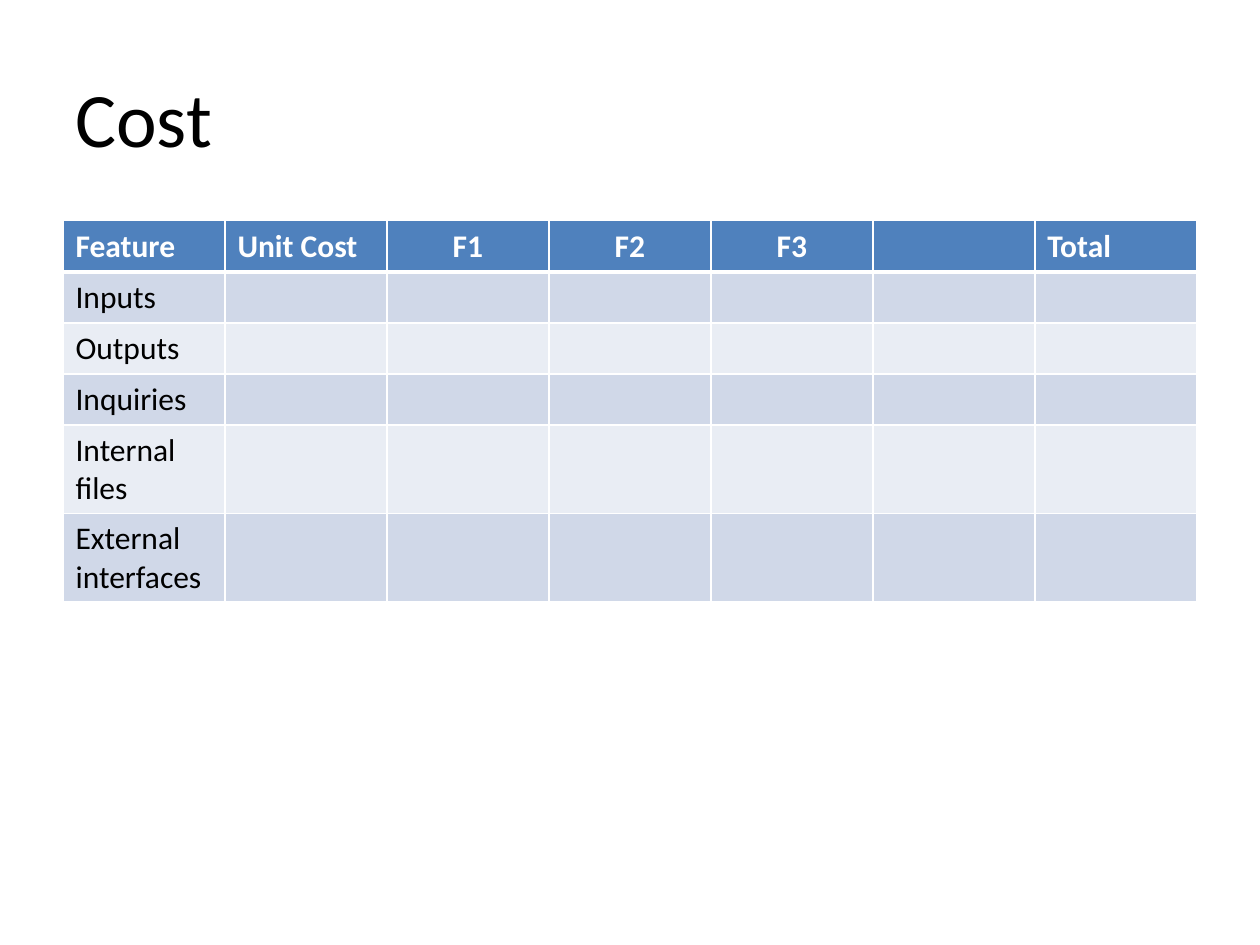
from lxml.etree import SubElement
from pptx import Presentation
from pptx.dml.color import RGBColor
from pptx.enum.text import MSO_ANCHOR, PP_ALIGN
from pptx.oxml.ns import qn
from pptx.util import Cm, Pt

TITLE = "Cost"
HEADS = ["Feature", "Unit Cost", "F1", "F2", "F3", "", "Total"]
ITEMS = ["Inputs", "Outputs", "Inquiries", "Internal files", "External interfaces"]
MIDDLE = {"F1", "F2", "F3"}

FONT = "Calibri"
BLACK = RGBColor(0x00, 0x00, 0x00)
WHITE = RGBColor(0xFF, 0xFF, 0xFF)
BLUE = RGBColor(0x4F, 0x81, 0xBD)
BANDS = [RGBColor(0xD0, 0xD8, 0xE8), RGBColor(0xE9, 0xED, 0xF4)]

LEFT, WIDTH = Cm(1.27), Cm(22.86)
ROW = Cm(1.03)


def write(para, text, size, color, bold=False):
    run = para.add_run()
    run.text = text
    font = run.font
    font.name, font.size, font.bold = FONT, Pt(size), bold
    font.color.rgb = color


def edge(cell, side, width):
    line = SubElement(cell._tc.get_or_add_tcPr(), qn(f"a:ln{side}"), w=str(Pt(width)))
    fill = SubElement(line, qn("a:solidFill"))
    SubElement(fill, qn("a:srgbClr"), val=str(WHITE))


def main():
    deck = Presentation()
    deck.slide_width, deck.slide_height = Cm(25.4), Cm(19.05)
    slide = deck.slides.add_slide(deck.slide_layouts[6])

    frame = slide.shapes.add_textbox(LEFT, Cm(0.76), WIDTH, Cm(3.18)).text_frame
    frame.word_wrap = True
    frame.vertical_anchor = MSO_ANCHOR.MIDDLE
    write(frame.paragraphs[0], TITLE, 44, BLACK)

    rows = [HEADS] + [[item] + [""] * (len(HEADS) - 1) for item in ITEMS]
    table = slide.shapes.add_table(
        len(rows), len(HEADS), LEFT, Cm(4.45), WIDTH, ROW * len(rows)
    ).table

    for r, row in enumerate(rows):
        table.rows[r].height = ROW
        head = r == 0
        for c, text in enumerate(row):
            cell = table.cell(r, c)
            edge(cell, "L", 1)
            edge(cell, "R", 1)
            edge(cell, "T", 3 if r == 1 else 1)
            edge(cell, "B", 3 if head else 1)
            cell.fill.solid()
            cell.fill.fore_color.rgb = BLUE if head else BANDS[(r - 1) % 2]
            para = cell.text_frame.paragraphs[0]
            if text in MIDDLE:
                para.alignment = PP_ALIGN.CENTER
            if text:
                write(para, text, 18, WHITE if head else BLACK, head)

    deck.save("out.pptx")


if __name__ == "__main__":
    main()
